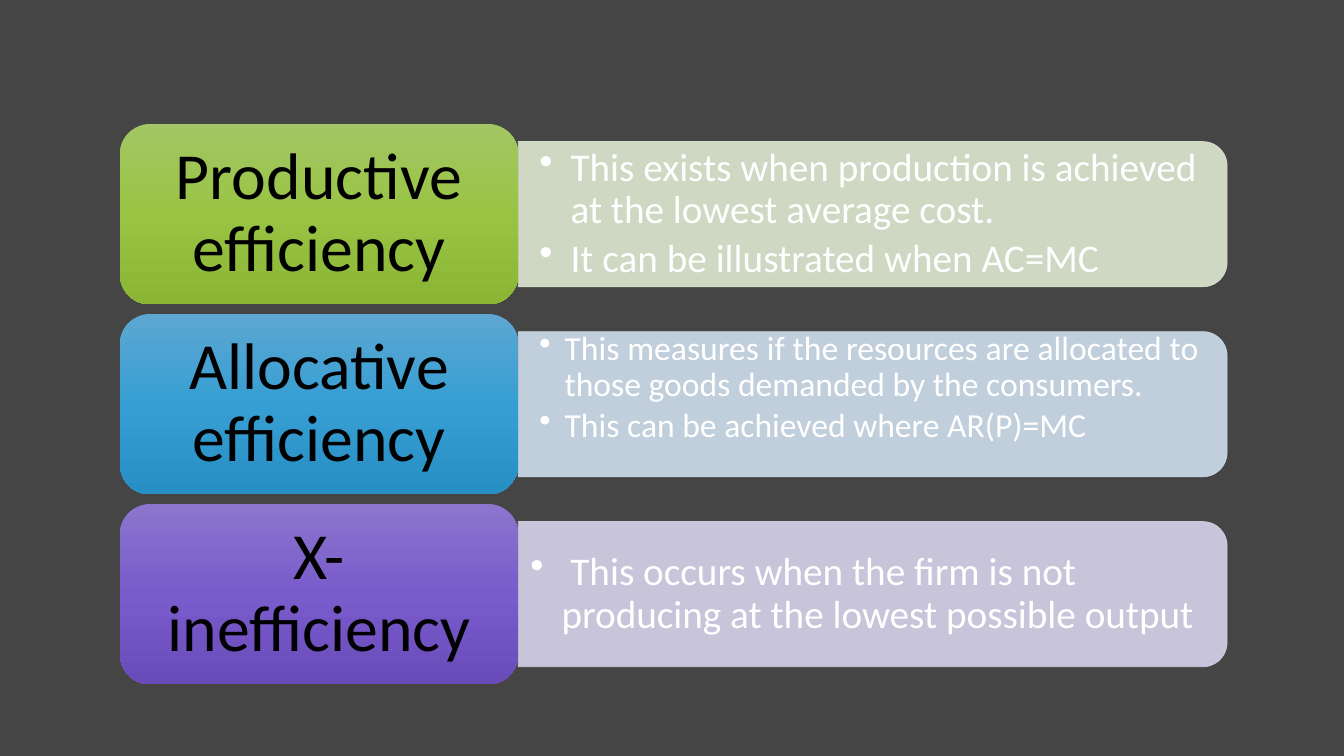
from dataclasses import dataclass
from copy import deepcopy

from lxml.etree import SubElement
from pptx import Presentation
from pptx.dml.color import RGBColor
from pptx.enum.shapes import MSO_SHAPE
from pptx.enum.text import MSO_ANCHOR, PP_ALIGN
from pptx.oxml.ns import qn
from pptx.util import Inches, Pt


@dataclass(frozen=True)
class Theme:
    """Colours, font and type sizes of the slide."""
    background: str = "454545"
    title_text: str = "000000"
    body_text: str = "FFFFFF"
    font: str = "Calibri"
    title_size: int = 47
    body_size: int = 28
    small_size: int = 24
    green: tuple = ("A2C664", "99C443", "8AB535", "DDE8D0")
    blue: tuple = ("5DA7D2", "369ED3", "288FC4", "CEDEEC")
    purple: tuple = ("8B75CD", "7A5BCB", "6A4BBA", "D7D2EA")


THEME = Theme()
TITLE_LEFT, TITLE_WIDTH, TITLE_HEIGHT = 1.19, 3.95, 1.79
FIRST_TOP, LAST_TOP = 1.23, 5.0
BAR_LEFT, BAR_WIDTH, BAR_HEIGHT = TITLE_LEFT + TITLE_WIDTH, 7.03, 1.44
BODY_WIDTH, BODY_HEIGHT = 6.96, 1.3

ROWS = [
    {"title": "Productive efficiency", "colors": THEME.green,
     "points": ["This exists when production is achieved at the lowest average cost.",
                "It can be illustrated when AC=MC"],
     "size": THEME.body_size, "indent": 0.31, "align": PP_ALIGN.LEFT,
     "insets": (0.21, 0.1, 0.21, 0.1)},
    {"title": "Allocative efficiency", "colors": THEME.blue,
     "points": ["This measures if the resources are allocated to those goods "
                "demanded by the consumers.",
                "This can be achieved where AR(P)=MC"],
     "size": THEME.small_size, "indent": 0.25, "align": PP_ALIGN.JUSTIFY,
     "insets": (0.21, 0, 0.21, 0.32)},
    {"title": "X-inefficiency", "colors": THEME.purple,
     "points": [" This occurs when the firm is not producing at the lowest "
                "possible output"],
     "size": THEME.body_size, "indent": 0.31, "align": PP_ALIGN.LEFT,
     "insets": (0.12, 0.06, 0.12, 0.06)},
]


def assign(target, values):
    """Set each named attribute of the target."""
    for name, value in values.items():
        setattr(target, name, value)


def set_frame(frame, insets):
    """Wrap the text, centre it vertically and set its margins."""
    left, top, right, bottom = map(Inches, insets)
    assign(frame, {"word_wrap": True, "vertical_anchor": MSO_ANCHOR.MIDDLE,
                   "margin_left": left, "margin_top": top,
                   "margin_right": right, "margin_bottom": bottom})


def write_para(para, text, size, color, align, space_after):
    """Write one paragraph in the theme font."""
    assign(para, {"alignment": align, "line_spacing": 0.9,
                  "space_after": Pt(space_after)})
    span = para.add_run()
    span.text = text
    assign(span.font, {"name": THEME.font, "size": Pt(size)})
    span.font.color.rgb = RGBColor.from_string(color)


def add_bullet(para, indent):
    """Give the paragraph a round bullet with a hanging indent."""
    properties = para._p.get_or_add_pPr()
    properties.set("marL", str(Inches(indent)))
    properties.set("indent", str(-Inches(indent)))
    SubElement(properties, qn("a:buChar"), char="•")


def fill_gradient(shape, colors):
    """Fill the shape from top to bottom with evenly spaced colours."""
    shape.fill.gradient()
    shape.fill.gradient_angle = 270
    stop_list = shape._element.spPr.find(".//" + qn("a:gsLst"))
    stop_list.append(deepcopy(stop_list[0]))
    for index, (stop, color) in enumerate(zip(shape.fill.gradient_stops, colors)):
        stop.position = index / (len(colors) - 1)
        stop.color.rgb = RGBColor.from_string(color)


def add_bar(page, middle, color):
    """Add the pale bar, rounded on its right side."""
    center = BAR_LEFT + BAR_WIDTH / 2
    bar = page.shapes.add_shape(
        MSO_SHAPE.ROUND_2_SAME_RECTANGLE,
        Inches(center - BAR_HEIGHT / 2), Inches(middle - BAR_WIDTH / 2),
        Inches(BAR_HEIGHT), Inches(BAR_WIDTH))
    bar.rotation = 90
    bar.shadow.inherit = False
    bar.line.width = Pt(0.5)
    for fill in (bar.fill, bar.line.fill):
        fill.solid()
        fill.fore_color.rgb = RGBColor.from_string(color)
    for color_node in bar._element.spPr.iter(qn("a:srgbClr")):
        SubElement(color_node, qn("a:alpha"), val="90000")


def add_points(page, middle, row):
    """Add the bulleted text over the bar."""
    box = page.shapes.add_textbox(
        Inches(BAR_LEFT), Inches(middle - BODY_HEIGHT / 2),
        Inches(BODY_WIDTH), Inches(BODY_HEIGHT))
    frame = box.text_frame
    set_frame(frame, row["insets"])
    for index, text in enumerate(row["points"]):
        para = frame.add_paragraph() if index else frame.paragraphs[0]
        para.level = 1
        write_para(para, text, row["size"], THEME.body_text, row["align"],
                   row["size"] * 0.15)
        add_bullet(para, row["indent"])


def add_title(page, top, text, colors):
    """Add the gradient block that names the kind of efficiency."""
    block = page.shapes.add_shape(
        MSO_SHAPE.ROUNDED_RECTANGLE, Inches(TITLE_LEFT), Inches(top),
        Inches(TITLE_WIDTH), Inches(TITLE_HEIGHT))
    block.shadow.inherit = False
    block.line.fill.background()
    fill_gradient(block, colors)
    set_frame(block.text_frame, (0.2, 0.1, 0.2, 0.1))
    write_para(block.text_frame.paragraphs[0], text, THEME.title_size,
               THEME.title_text, PP_ALIGN.CENTER, 0)


def main():
    """Build the slide and save it."""
    deck = Presentation()
    assign(deck, {"slide_width": Inches(13.33), "slide_height": Inches(7.5)})
    page = deck.slides.add_slide(deck.slide_layouts[6])
    page.background.fill.solid()
    page.background.fill.fore_color.rgb = RGBColor.from_string(THEME.background)
    pitch = (LAST_TOP - FIRST_TOP) / (len(ROWS) - 1)
    for index, row in enumerate(ROWS):
        top = FIRST_TOP + index * pitch
        middle = top + TITLE_HEIGHT / 2
        *gradient, pale = row["colors"]
        add_bar(page, middle, pale)
        add_points(page, middle, row)
        add_title(page, top, row["title"], gradient)
    deck.save("out.pptx")


if __name__ == "__main__":
    main()
